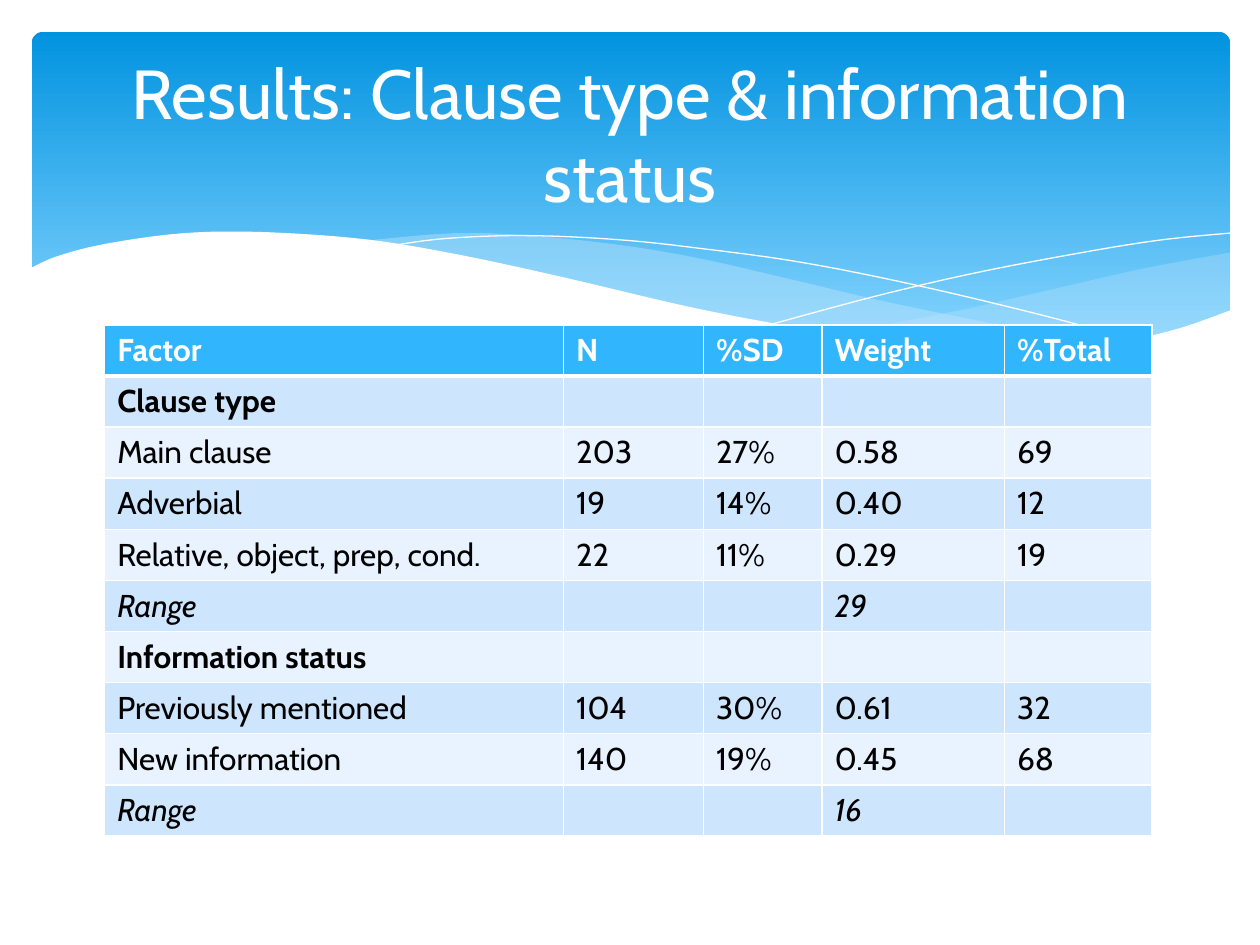
import pptx
import pptx.util
import pptx.dml.color
import pptx.enum.shapes
import pptx.enum.text
import pptx.oxml
import pptx.oxml.ns

Cm, Pt = pptx.util.Cm, pptx.util.Pt
FONT = "Cabin"
WHITE = "FFFFFF"

# Wave knots in cm from the top left of the band
RIGHT = [(24.16, 4.45), (22.38, 4.78), (20.5, 5.21), (18.49, 5.66), (16.15, 6.1)]
RIGHT_LOW = [(16.15, 6.1), (17.63, 6.27), (19.2, 6.4), (20.57, 6.4),
             (22.15, 6.22), (23.29, 5.94), (24.16, 5.64)]
MID = [(22.05, 6.3), (19.86, 5.97), (17.3, 5.46), (15.34, 5), (13.46, 4.57),
       (11.79, 4.29), (10.03, 4.11), (8.53, 4.06), (6.63, 4.22)]
MID_LOW = [(6.63, 4.22), (8.56, 4.52), (10.77, 5), (12.83, 5.46), (14.63, 5.84),
           (16.26, 6.12), (18.06, 6.35), (19.86, 6.43), (22.05, 6.3)]
FALL = [(7.21, 4.32), (8.33, 4.17), (9.93, 4.11), (11.79, 4.19), (13.49, 4.37),
        (15.52, 4.65), (17.83, 5.11), (20.47, 5.74), (22.4, 6.27)]
RISE = [(14.94, 5.89), (17.02, 5.33), (19.08, 4.85), (21.36, 4.42),
        (22.83, 4.19), (24.16, 4.06)]
FRONT = [(24.18, 5.61), (22.99, 6.02), (21.59, 6.3), (19.91, 6.4), (17.81, 6.27),
         (15.82, 6.02), (13.46, 5.59), (10.72, 4.95), (8.64, 4.5), (6.78, 4.19),
         (4.72, 4.04), (3.07, 4.06), (1.52, 4.27), (0.53, 4.52), (-0.05, 4.78)]
BASE = [(-0.05, 7.72), (24.18, 7.72)]

COLS = [9.25, 2.82, 2.39, 3.68, 2.97]
ROWS = [
    ["Factor", "N", "%SD", "Weight", "%Total"],
    ["Clause type", "", "", "", ""],
    ["Main clause", "203", "27%", "0.58", "69"],
    ["Adverbial", "19", "14%", "0.40", "12"],
    ["Relative, object, prep, cond.", "22", "11%", "0.29", "19"],
    ["Range", "", "", "29", ""],
    ["Information status", "", "", "", ""],
    ["Previously mentioned", "104", "30%", "0.61", "32"],
    ["New information", "140", "19%", "0.45", "68"],
    ["Range", "", "", "16", ""],
]
HEADS = ("Factor", "Clause type", "Information status")


def color(code):
    return pptx.dml.color.RGBColor.from_string(code)


def style(font, size, code, bold=False, italic=False):
    font.name, font.size = FONT, Pt(size)
    font.bold, font.italic = bold, italic
    font.color.rgb = color(code)


def curve(knots, steps=6):
    """Points of a Catmull-Rom curve through the knots."""
    ends = [knots[0], *knots, knots[-1]]
    points = [knots[0]]
    for a, b, c, d in zip(ends, ends[1:], ends[2:], ends[3:]):
        for step in range(1, steps + 1):
            t = step / steps
            points.append(tuple(
                q + t / 2 * (r - p + t * (2 * p - 5 * q + 4 * r - s
                                          + t * (3 * q - p - 3 * r + s)))
                for p, q, r, s in zip(a, b, c, d)))
    return points


def wave(slide, box, points, fill=None, alpha=100):
    """Filled area, or a white hairline when there is no fill."""
    left, top = box[:2]
    spots = [(Cm(left + x), Cm(top + y)) for x, y in points]
    build = slide.shapes.build_freeform(*spots[0])
    build.add_line_segments(spots[1:], close=fill is not None)
    shape = build.convert_to_shape()
    shape.shadow.inherit = False
    if fill is None:
        shape.fill.background()
        shape.line.color.rgb = color(WHITE)
        shape.line.width = Pt(0)
        return
    shape.line.fill.background()
    shape.fill.solid()
    shape.fill.fore_color.rgb = color(fill)
    if alpha < 100:
        tone = shape.element.find(".//" + pptx.oxml.ns.qn("a:srgbClr"))
        tone.append(pptx.oxml.parse_xml(
            f'<a:alpha {pptx.oxml.ns.nsdecls("a")} val="{alpha * 1000}"/>'))


def band(slide, box):
    # Gradient panel
    panel = slide.shapes.add_shape(
        pptx.enum.shapes.MSO_SHAPE.ROUNDED_RECTANGLE, *map(Cm, box))
    panel.adjustments[0] = 0.034
    panel.shadow.inherit = False
    panel.line.fill.background()
    panel.fill.gradient()
    panel.fill.gradient_angle = 270
    for stop, place, code in zip(panel.fill.gradient_stops, (0, 0.9),
                                 ("0293E0", "83D3FE")):
        stop.position = place
        stop.color.rgb = color(code)
    # Waves, from back to front
    wave(slide, box, curve(RIGHT) + curve(RIGHT_LOW), "C6E7FC", 29)
    wave(slide, box, curve(MID) + curve(MID_LOW), "C6E7FC", 40)
    wave(slide, box, curve(FALL))
    wave(slide, box, curve(RISE))
    wave(slide, box, curve(FRONT) + BASE, WHITE)


def border(cell, row):
    widths = {"L": 1, "R": 1, "T": 3 if row == 1 else 1, "B": 3 if row == 0 else 1}
    props = cell._tc.get_or_add_tcPr()
    for side, width in widths.items():
        props.append(pptx.oxml.parse_xml(
            f'<a:ln{side} {pptx.oxml.ns.nsdecls("a")} w="{Pt(width)}"><a:solidFill>'
            f'<a:srgbClr val="{WHITE}"/></a:solidFill></a:ln{side}>'))


def grid(slide, box):
    table = slide.shapes.add_table(len(ROWS), len(COLS), *map(Cm, box)).table
    for col, width in zip(table.columns, COLS):
        col.width = Cm(width)
    for y, words in enumerate(ROWS):
        table.rows[y].height = Cm(box[3] / len(ROWS))
        fill = "31B6FD" if y == 0 else ("E8F3FF", "CEE5FE")[y % 2]
        for x, word in enumerate(words):
            cell = table.cell(y, x)
            border(cell, y)
            cell.fill.solid()
            cell.fill.fore_color.rgb = color(fill)
            cell.text = word
            para = cell.text_frame.paragraphs[0]
            for font in [run.font for run in para.runs] or [para.font]:
                style(font, 18, "000000" if y else WHITE,
                      words[0] in HEADS, words[0] == "Range")


def heading(slide, box):
    title = slide.shapes.title
    title.left, title.top, title.width, title.height = map(Cm, box)
    frame = title.text_frame
    frame.text = "Results: Clause type & information status"
    frame.word_wrap = True
    frame.auto_size = pptx.enum.text.MSO_AUTO_SIZE.NONE
    frame.vertical_anchor = pptx.enum.text.MSO_ANCHOR.MIDDLE
    para = frame.paragraphs[0]
    para.alignment = pptx.enum.text.PP_ALIGN.CENTER
    style(para.runs[0].font, 39.6, WHITE)
    # Bring the title in front of the band
    slide.shapes.element.append(title.element)


def main():
    deck = pptx.Presentation()
    deck.slide_width, deck.slide_height = Cm(25.4), Cm(19.05)
    slide = deck.slides.add_slide(deck.slide_layouts[5])
    band(slide, (0.64, 0.64, 24.16, 6.86))
    grid(slide, (2.11, 6.55, 21.11, 10.3))
    heading(slide, (1.27, 0.94, 22.86, 3.48))
    deck.save("out.pptx")


if __name__ == "__main__":
    main()
